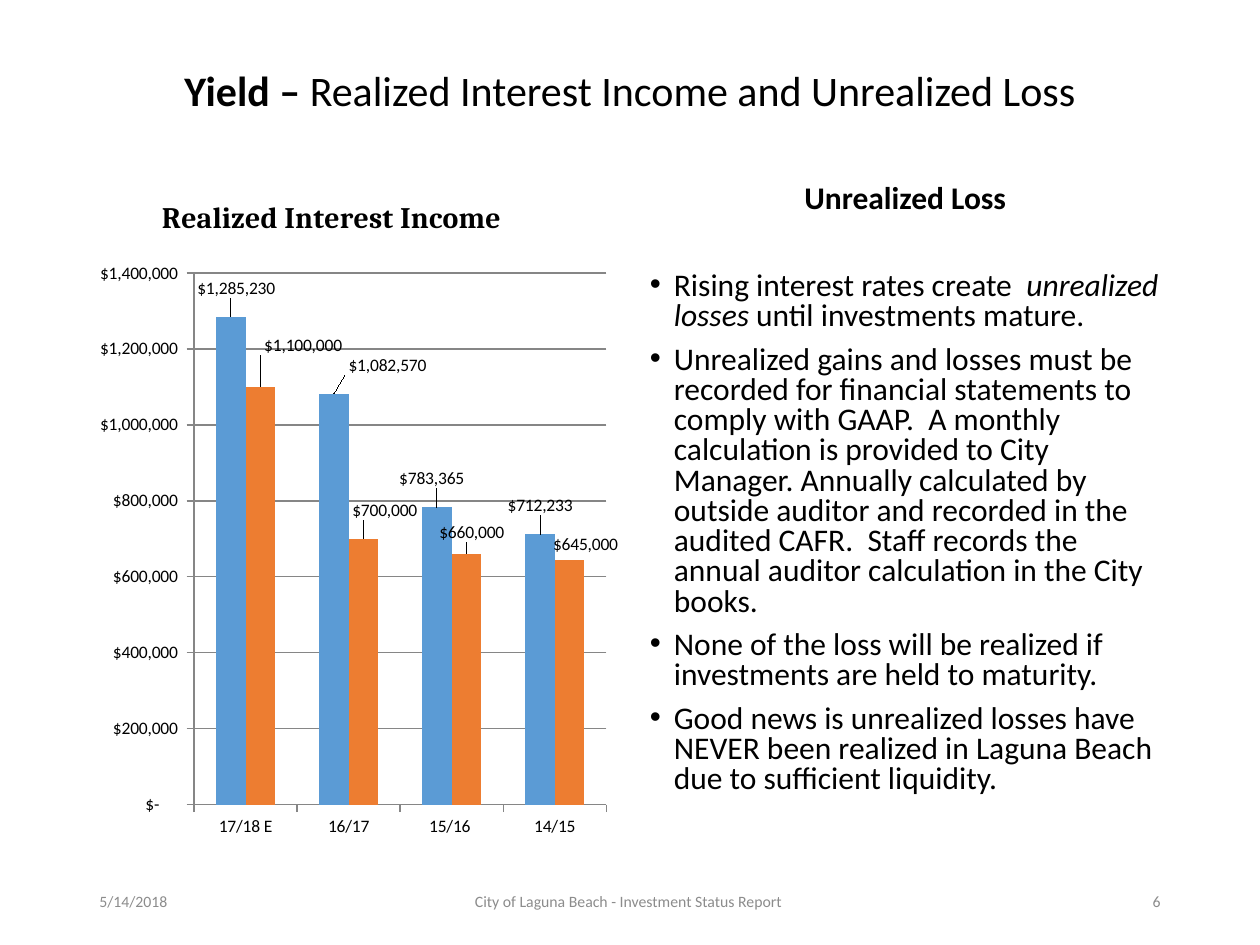
from dataclasses import dataclass

import lxml.etree
import pptx
import pptx.chart.data
import pptx.dml.color
import pptx.enum.chart
import pptx.enum.text
import pptx.oxml
import pptx.oxml.ns
import pptx.util

Inches = pptx.util.Inches
Pt = pptx.util.Pt
Align = pptx.enum.text.PP_ALIGN
Anchor = pptx.enum.text.MSO_ANCHOR
qn = pptx.oxml.ns.qn


@dataclass(frozen=True)
class Theme:
    font: str = "Calibri"
    chart_title_font: str = "Cambria"
    black: str = "000000"
    footer_gray: str = "8C8C8C"
    axis_gray: str = "868686"
    title_size: float = 24
    chart_title_size: float = 17
    body_size: float = 18
    chart_size: float = 10
    footer_size: float = 9


@dataclass(frozen=True)
class Box:
    left: float
    top: float
    width: float
    height: float

    def lengths(self) -> tuple:
        return tuple(Inches(value) for value in (self.left, self.top, self.width, self.height))


@dataclass(frozen=True)
class Run:
    text: str
    bold: bool = False
    italic: bool = False


@dataclass(frozen=True)
class IncomeSeries:
    name: str
    values: tuple
    color: str
    label_offsets: tuple


@dataclass(frozen=True)
class Footer:
    text: str
    box: Box
    align: Align


THEME = Theme()
DOLLARS = '_("$"* #,##0_);_("$"* \\(#,##0\\);_("$"* "-"??_);_(@_)'
CATEGORIES = ("17/18 E", "16/17", "15/16 ", "14/15")
SERIES = (
    IncomeSeries("Series 1", (1285230, 1082570, 783365, 712233), "5B9BD5",
                 ((0.01, -0.02), (0.1, -0.02), (-0.01, -0.02), (0, -0.02))),
    IncomeSeries("Series 2", (1100000, 700000, 660000, 645000), "ED7D31",
                 ((0.08, -0.04), (0.04, -0.02), (0.01, -0.01), (0.03, 0))),
)
TITLE = (Run("Yield – ", bold=True), Run("Realized Interest Income and Unrealized Loss"))
BULLETS = (
    (Run("Rising interest rates create  "), Run("unrealized losses", italic=True),
     Run(" until investments mature.")),
    (Run("Unrealized gains and losses must be recorded for financial statements to comply "
         "with GAAP.  A monthly calculation is provided to City Manager. Annually calculated "
         "by outside auditor and recorded in the audited CAFR.  Staff records the annual "
         "auditor calculation in the City books."),),
    (Run("None of the loss will be realized if investments are held to maturity."),),
    (Run("Good news is unrealized losses have NEVER been realized in Laguna Beach due to "
         "sufficient liquidity."),),
)
FOOTERS = (
    Footer("5/14/2018", Box(0.69, 6.95, 2.25, 0.4), Align.LEFT),
    Footer("City of Laguna Beach - Investment Status Report ",
           Box(3.31, 6.95, 3.38, 0.4), Align.CENTER),
    Footer("6", Box(7.06, 6.95, 2.25, 0.4), Align.RIGHT),
)


def rgb(color: str) -> pptx.dml.color.RGBColor:
    return pptx.dml.color.RGBColor.from_string(color)


def style_font(font, size: float, color: str = THEME.black, name: str = THEME.font,
               bold: bool = False, italic: bool = False) -> None:
    font.name, font.size, font.bold, font.italic = name, Pt(size), bold, italic
    font.color.rgb = rgb(color)


def add_frame(slide, box: Box, anchor: Anchor = Anchor.MIDDLE):
    frame = slide.shapes.add_textbox(*box.lengths()).text_frame
    frame.word_wrap = True
    frame.vertical_anchor = anchor
    return frame


def write_text(paragraph, runs: tuple, *, size: float, color: str = THEME.black,
               align: Align = Align.LEFT, line_spacing: float = 1.0,
               before: float = 0, after: float = 0, bullet: bool = False) -> None:
    paragraph.alignment = align
    paragraph.line_spacing = line_spacing
    paragraph.space_before, paragraph.space_after = Pt(before), Pt(after)
    for item in runs:
        run = paragraph.add_run()
        run.text = item.text
        style_font(run.font, size, color, bold=item.bold, italic=item.italic)
    if bullet:
        properties = paragraph._p.get_or_add_pPr()
        properties.set("marL", str(Inches(0.19)))
        properties.set("indent", str(Inches(-0.19)))
        lxml.etree.SubElement(properties, qn("a:buFont")).set("typeface", "Arial")
        lxml.etree.SubElement(properties, qn("a:buChar")).set("char", "•")


def make_layout(**settings):
    layout = lxml.etree.Element(qn("c:layout"))
    manual = lxml.etree.SubElement(layout, qn("c:manualLayout"))
    for tag, value in settings.items():
        lxml.etree.SubElement(manual, qn(f"c:{tag}")).set("val", str(value))
    return layout


def place_layout(parent, index: int, layout) -> None:
    for existing in parent.findall(qn("c:layout")):
        parent.remove(existing)
    parent.insert(index, layout)


def format_series(series, income: IncomeSeries) -> None:
    series.format.fill.solid()
    series.format.fill.fore_color.rgb = rgb(income.color)
    labels = series.data_labels
    labels.show_value = True
    labels.number_format, labels.number_format_is_linked = DOLLARS, False
    style_font(labels.font, THEME.chart_size)
    for index in range(len(income.values)):
        label = series.points[index].data_label
        style_font(label.font, THEME.chart_size)
        label.position = pptx.enum.chart.XL_LABEL_POSITION.OUTSIDE_END
    for element, (x, y) in zip(labels._element.findall(qn("c:dLbl")), income.label_offsets):
        place_layout(element, 1, make_layout(x=x, y=y))
        number_format = lxml.etree.Element(qn("c:numFmt"), formatCode=DOLLARS, sourceLinked="0")
        element.insert(2, number_format)


def add_income_chart(slide, box: Box) -> None:
    data = pptx.chart.data.CategoryChartData(number_format=DOLLARS)
    data.categories = CATEGORIES
    for income in SERIES:
        data.add_series(income.name, income.values)
    chart = slide.shapes.add_chart(
        pptx.enum.chart.XL_CHART_TYPE.COLUMN_CLUSTERED, *box.lengths(), data).chart
    style_font(chart.font, THEME.chart_size)
    chart.has_legend = False
    plot = chart.plots[0]
    plot.gap_width, plot.overlap, plot.vary_by_categories = 150, 0, False
    for series, income in zip(plot.series, SERIES):
        format_series(series, income)

    paragraph = chart.chart_title.text_frame.paragraphs[0]
    run = paragraph.add_run()
    run.text = "Realized Interest Income "
    style_font(run.font, THEME.chart_title_size, name=THEME.chart_title_font, bold=True)
    title = chart.chart_title._element
    place_layout(title, 1, make_layout(xMode="edge", yMode="edge", x=0.13, y=0.02))
    title.find(qn("c:overlay")).set("val", "1")
    plot_area = chart._chartSpace.find(qn("c:chart")).find(qn("c:plotArea"))
    place_layout(plot_area, 0, make_layout(
        layoutTarget="inner", xMode="edge", yMode="edge", x=0.2, y=0.14, w=0.77, h=0.79))

    values = chart.value_axis
    values.minimum_scale, values.maximum_scale, values.major_unit = 0, 1400000, 200000
    values.tick_labels.number_format = DOLLARS
    values.tick_labels.number_format_is_linked = False
    values.has_major_gridlines = True
    values.major_gridlines.format.line.color.rgb = rgb(THEME.axis_gray)
    for axis in (values, chart.category_axis):
        axis.major_tick_mark = pptx.enum.chart.XL_TICK_MARK.OUTSIDE
        axis.format.line.color.rgb = rgb(THEME.axis_gray)
        style_font(axis.tick_labels.font, THEME.chart_size)


def main() -> None:
    presentation = pptx.Presentation()
    presentation.slide_width, presentation.slide_height = Inches(10), Inches(7.5)
    slide = presentation.slides.add_slide(presentation.slide_layouts[6])
    title = add_frame(slide, Box(0.69, 0.4, 8.62, 0.68))
    write_text(title.paragraphs[0], TITLE, size=THEME.title_size,
               align=Align.CENTER, line_spacing=0.9)
    body = add_frame(slide, Box(5.06, 1.42, 4.25, 5.34), Anchor.TOP)
    write_text(body.paragraphs[0], (Run("Unrealized Loss", bold=True),), size=THEME.body_size,
               align=Align.CENTER, line_spacing=0.8, before=7.5, after=25)
    for runs in BULLETS:
        write_text(body.add_paragraph(), runs, size=THEME.body_size,
                   line_spacing=0.8, before=7.5, bullet=True)
    for footer in FOOTERS:
        write_text(add_frame(slide, footer.box).paragraphs[0], (Run(footer.text),),
                   size=THEME.footer_size, color=THEME.footer_gray, align=footer.align)
    add_income_chart(slide, Box(0.69, 1.42, 4.25, 5.34))
    presentation.save("out.pptx")


if __name__ == "__main__":
    main()
